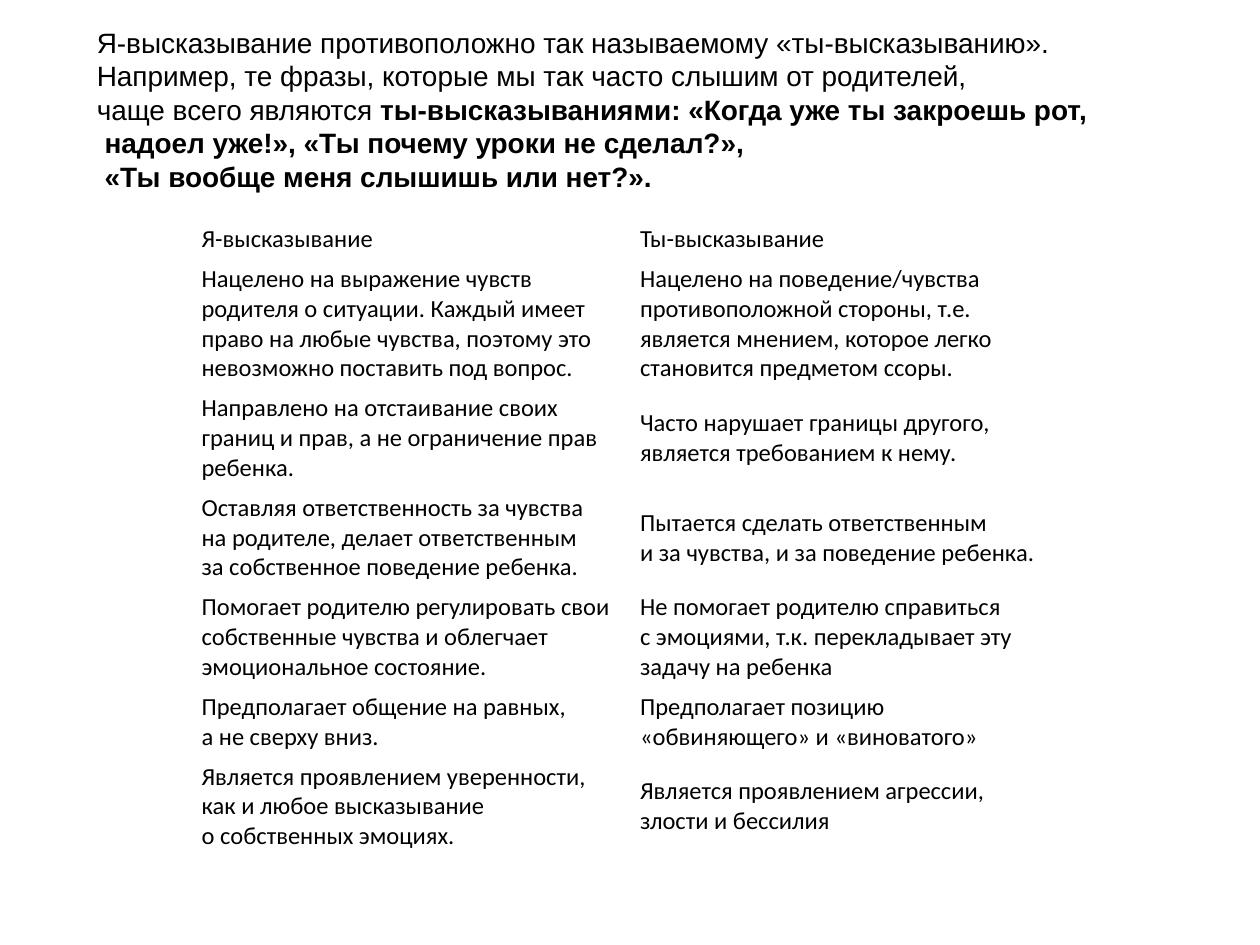
from pptx import Presentation
from pptx.dml.color import RGBColor
from pptx.enum.text import MSO_ANCHOR
from pptx.util import Inches, Pt

MIDDLE, TOP = MSO_ANCHOR.MIDDLE, MSO_ANCHOR.TOP
COLORS = {"text": "000000"}
NBSP = chr(160)
COL_W = 3.48
HEADER_H, LINE_H, CELL_PAD = 0.31, 0.235, 0.08

INTRO = [
    [("Я-высказывание противоположно так называемому «ты-высказыванию».", False)],
    [("Например, те фразы, которые мы так часто слышим от родителей,", False)],
    [("чаще всего являются ", False),
     ("ты-высказываниями: «Когда уже ты закроешь рот,", True)],
    [(" надоел уже!», «Ты почему уроки не сделал?»,", True)],
    [(" «Ты вообще меня слышишь или нет?».", True)],
]
# Text lines in the taller cell, then the two statements compared
ROWS = [
    (1, "Я-высказывание", "Ты-высказывание"),
    (4, "Нацелено на выражение чувств родителя о ситуации. Каждый имеет право "
        "на любые чувства, поэтому это невозможно поставить под вопрос.",
     "Нацелено на поведение/чувства противоположной стороны, т.е. является "
     "мнением, которое легко становится предметом ссоры."),
    (3, "Направлено на отстаивание своих границ и прав, а не ограничение прав ребенка.",
     "Часто нарушает границы другого, является требованием к нему."),
    (3, "Оставляя ответственность за чувства на родителе, делает ответственным "
        "за собственное поведение ребенка.",
     "Пытается сделать ответственным и за чувства, и за поведение ребенка."),
    (3, "Помогает родителю регулировать свои собственные чувства и облегчает "
        "эмоциональное состояние.",
     "Не помогает родителю справиться с эмоциями, т.к. перекладывает эту задачу на ребенка"),
    (2, "Предполагает общение на равных, а не сверху вниз.",
     "Предполагает позицию «обвиняющего» и «виноватого»"),
    (3, "Является проявлением уверенности, как и любое высказывание о собственных эмоциях.",
     "Является проявлением агрессии, злости и бессилия"),
]


def bind_short_words(text):
    """Join words of one or two letters to the next word with a no-break space."""
    words = text.split(" ")
    bound = [w + (NBSP if 0 < len(w.strip("«")) <= 2 else " ") for w in words[:-1]]
    return "".join(bound) + words[-1]


def style_run(r, font, size, bold=False):
    r.font.name, r.font.size, r.font.bold = font, Pt(size), bold
    r.font.color.rgb = RGBColor.from_string(COLORS["text"])


prs = Presentation()
prs.slide_width, prs.slide_height = Inches(10), Inches(7.5)
s = prs.slides.add_slide(prs.slide_layouts[6])

# Comparison table
heights = [HEADER_H] + [CELL_PAD + lines * LINE_H for lines, *_ in ROWS[1:]]
table = s.shapes.add_table(len(ROWS), 2, Inches(1.52), Inches(1.74),
                           Inches(2 * COL_W), Inches(sum(heights))).table
table.first_row = table.horz_banding = False
for col in table.columns:
    col.width = Inches(COL_W)
for row, height, (_, *statements) in zip(table.rows, heights, ROWS):
    row.height = Inches(height)
    for cell, statement in zip(row.cells, statements):
        cell.fill.background()
        cell.vertical_anchor = MIDDLE
        cell.margin_left = cell.margin_right = Inches(0.08)
        cell.margin_top = cell.margin_bottom = Inches(0.04)
        cell.text = bind_short_words(statement)
        style_run(cell.text_frame.paragraphs[0].runs[0], "Calibri", 14)

# Introduction
tf = s.shapes.add_textbox(Inches(0.67), Inches(0.15), Inches(8.17), Inches(1.75)).text_frame
tf.word_wrap = False
tf.vertical_anchor = TOP
for i, line in enumerate(INTRO):
    p = tf.add_paragraph() if i else tf.paragraphs[0]
    for text, bold in line:
        r = p.add_run()
        r.text = bind_short_words(text)
        style_run(r, "Arial", 16, bold)

prs.save("out.pptx")
